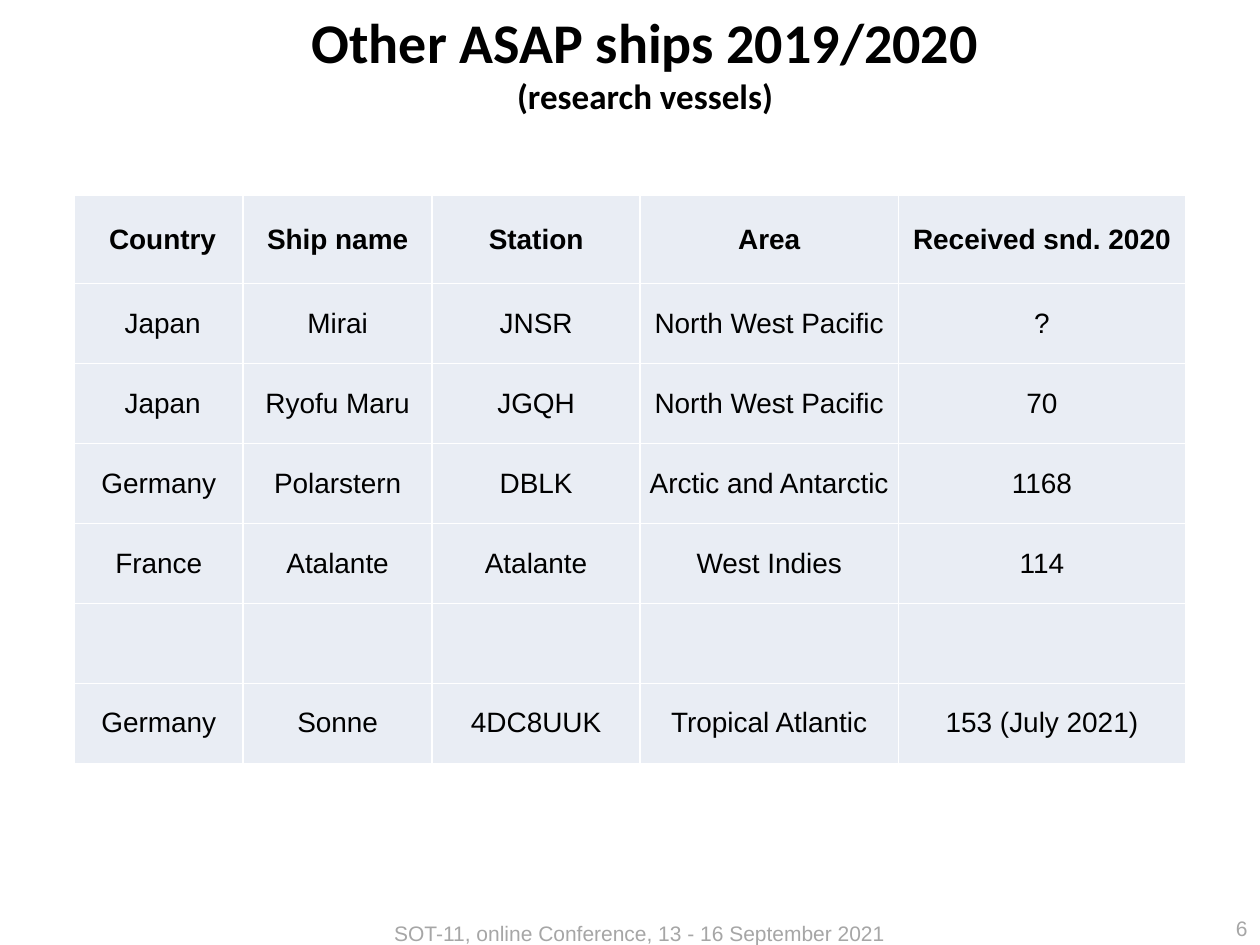
from lxml import etree
from pptx import Presentation
from pptx.dml.color import RGBColor
from pptx.enum import text
from pptx.oxml import ns
from pptx.util import Inches, Pt

COLORS = {"text": "000000", "muted": "A6A6A6", "cell": "E9EDF4", "border": "FFFFFF"}


def add_run(paragraph, content, size, color, font="Arial", bold=False):
    run = paragraph.add_run()
    run.text = content
    run.font.name = font
    run.font.size = Pt(size)
    run.font.bold = bold
    run.font.color.rgb = RGBColor.from_string(COLORS[color])


def add_borders(cell):
    properties = cell._tc.get_or_add_tcPr()
    for side in ("lnL", "lnR", "lnT", "lnB"):
        line = etree.SubElement(properties, ns.qn(f"a:{side}"), w=str(Pt(1)))
        fill = etree.SubElement(line, ns.qn("a:solidFill"))
        etree.SubElement(fill, ns.qn("a:srgbClr"), val=COLORS["border"])


presentation = Presentation()
presentation.slide_width = Inches(10)
presentation.slide_height = Inches(7.5)
slide = presentation.slides.add_slide(presentation.slide_layouts[5])

# Title
title = slide.shapes.title
title.left, title.top = Inches(1.22), Inches(0.01)
title.width, title.height = Inches(7.8), Inches(0.98)
title.text_frame.auto_size = text.MSO_AUTO_SIZE.NONE
title.text_frame.vertical_anchor = text.MSO_ANCHOR.TOP
paragraph = title.text_frame.paragraphs[0]
paragraph.alignment = text.PP_ALIGN.CENTER
add_run(paragraph, "Other ASAP ships 2019/2020", 32, "text", "Calibri", True)
paragraph.add_line_break()
add_run(paragraph, "(research vessels)", 20, "text", "Calibri", True)

# Ship table
rows = [
    (" Country", "Ship name", "Station", "Area", "Received snd. 2020"),
    (" Japan", "Mirai", "JNSR", "North West Pacific", "?"),
    (" Japan", "Ryofu Maru", "JGQH", "North West Pacific", "70"),
    ("Germany", "Polarstern", "DBLK", "Arctic and Antarctic", "1168"),
    ("France", "Atalante", "Atalante", "West Indies", "114"),
    ("", "", "", "", ""),
    ("Germany", "Sonne", "4DC8UUK", "Tropical Atlantic", "153 (July 2021)"),
]
column_widths = [1.34, 1.5, 1.65, 2.05, 2.28]
row_heights = [0.7] + [0.635] * (len(rows) - 1)
table = slide.shapes.add_table(
    len(rows), len(column_widths), Inches(0.59), Inches(1.55),
    Inches(sum(column_widths)), Inches(sum(row_heights))).table
table.first_row = table.horz_banding = False
for column, width in zip(table.columns, column_widths):
    column.width = Inches(width)
for row, height in zip(table.rows, row_heights):
    row.height = Inches(height)

for row_index, values in enumerate(rows):
    for column_index, value in enumerate(values):
        cell = table.cell(row_index, column_index)
        add_borders(cell)
        cell.fill.solid()
        cell.fill.fore_color.rgb = RGBColor.from_string(COLORS["cell"])
        cell.vertical_anchor = text.MSO_ANCHOR.MIDDLE
        cell.margin_left = cell.margin_right = Inches(0.07)
        cell.margin_top = cell.margin_bottom = 0
        paragraph = cell.text_frame.paragraphs[0]
        paragraph.alignment = text.PP_ALIGN.CENTER
        if value:
            add_run(paragraph, value, 16, "text", bold=row_index == 0)

# Footer and page number
footers = [
    ("SOT-11, online Conference, 13 - 16 September 2021", (3.03, 7.26, 4.88, 0.3),
     text.PP_ALIGN.LEFT, text.MSO_ANCHOR.TOP),
    ("6", (7.75, 7.24, 2.25, 0.25), text.PP_ALIGN.RIGHT, text.MSO_ANCHOR.MIDDLE),
]
for content, box, alignment, anchor in footers:
    frame = slide.shapes.add_textbox(*map(Inches, box)).text_frame
    frame.word_wrap = True
    frame.vertical_anchor = anchor
    frame.paragraphs[0].alignment = alignment
    add_run(frame.paragraphs[0], content, 12, "muted")

presentation.save("out.pptx")
